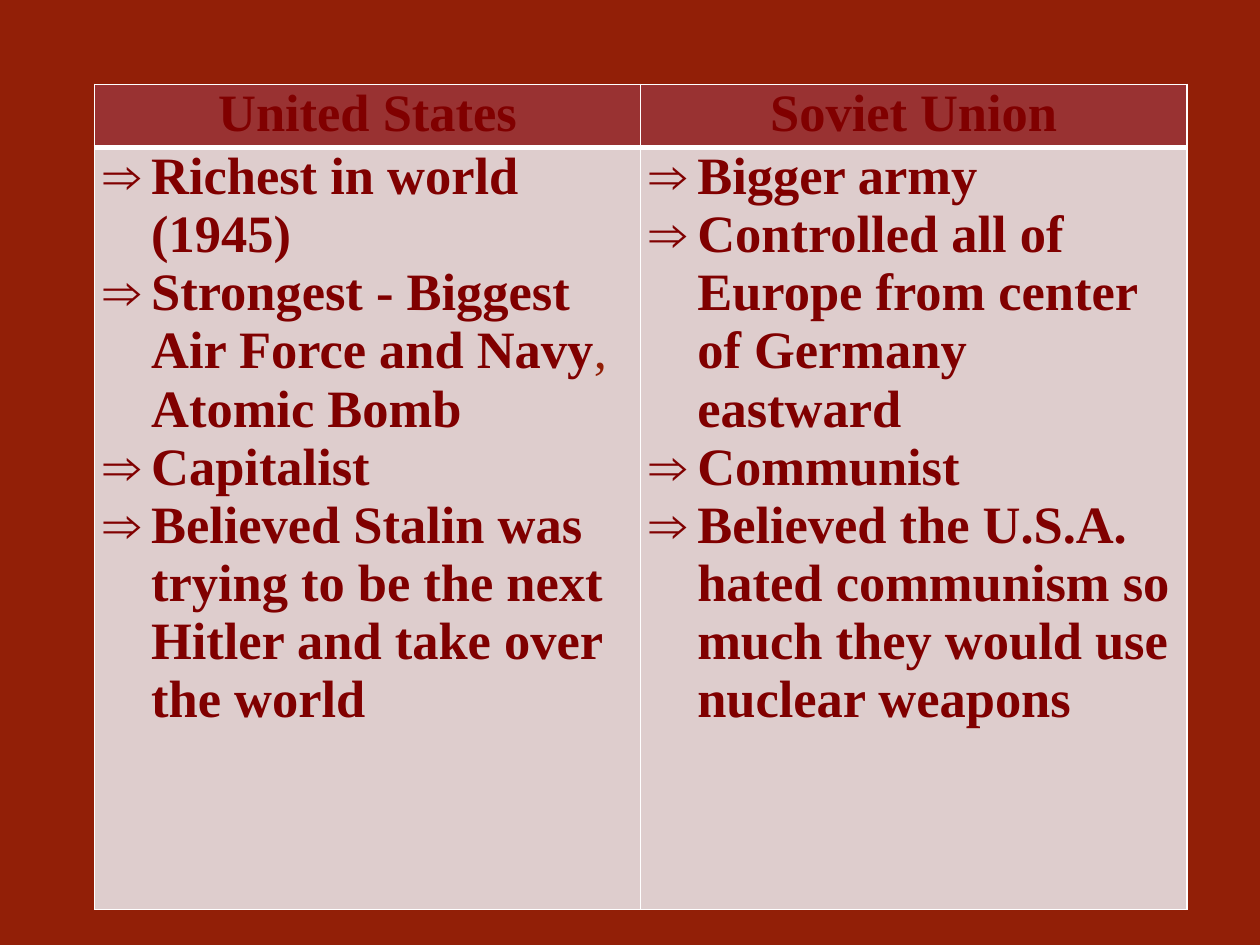
from lxml import etree
from pptx import Presentation
from pptx.dml.color import RGBColor
from pptx.enum.text import PP_ALIGN
from pptx.oxml.ns import qn
from pptx.util import Inches, Pt

CENTER = PP_ALIGN.CENTER
BACKGROUND, TEXT, LINE = "921F07", "800000", "FFFFFF"
HEADER_FILL, BODY_FILL = "993232", "DECDCD"
HANGING = Inches(0.38)
COLUMN_WIDTH = 4.335
ROW_HEIGHTS = [0.5, 6.05]

# Each point is a list of text pieces; a lone comma is set in a lighter style.
COUNTRIES = {
    "United States": [
        ["Richest in world (1945)"],
        ["Strongest - Biggest Air Force and Navy", ", ", "Atomic Bomb"],
        ["Capitalist"],
        ["Believed Stalin was trying to be the next Hitler and take over the world"],
    ],
    "Soviet Union": [
        ["Bigger army"],
        ["Controlled all of Europe from center of Germany eastward"],
        ["Communist"],
        ["Believed the U.S.A. hated communism so much they would use nuclear weapons"],
    ],
}


def color(hex_string):
    return RGBColor.from_string(hex_string)


def add_child(parent, tag, **attributes):
    child = etree.SubElement(parent, qn(tag))
    for key, value in attributes.items():
        child.set(key, str(value))
    return child


prs = Presentation()
prs.slide_width, prs.slide_height = Inches(10), Inches(7.5)
slide = prs.slides.add_slide(prs.slide_layouts[6])
slide.background.fill.solid()
slide.background.fill.fore_color.rgb = color(BACKGROUND)

table = slide.shapes.add_table(
    len(ROW_HEIGHTS), len(COUNTRIES), Inches(0.75), Inches(0.67),
    Inches(COLUMN_WIDTH * len(COUNTRIES)), Inches(sum(ROW_HEIGHTS))).table
for row, height in zip(table.rows, ROW_HEIGHTS):
    row.height = Inches(height)

for column, (country, points) in enumerate(COUNTRIES.items()):
    table.columns[column].width = Inches(COLUMN_WIDTH)
    for row, contents in enumerate([[[country]], points]):
        is_header = row == 0
        cell = table.cell(row, column)
        cell.margin_left = cell.margin_right = Inches(0.07)
        cell.margin_top = cell.margin_bottom = 0

        # Borders must come before the fill; the rule under the header is thick.
        thick_side = "a:lnB" if is_header else "a:lnT"
        cell_properties = cell._tc.get_or_add_tcPr()
        for side in ("a:lnL", "a:lnR", "a:lnT", "a:lnB"):
            width = Pt(3) if side == thick_side else Pt(1)
            border = add_child(cell_properties, side, w=width)
            add_child(add_child(border, "a:solidFill"), "a:srgbClr", val=LINE)
        cell.fill.solid()
        cell.fill.fore_color.rgb = color(HEADER_FILL if is_header else BODY_FILL)

        frame = cell.text_frame
        for number, pieces in enumerate(contents):
            paragraph = frame.add_paragraph() if number else frame.paragraphs[0]
            if is_header:
                paragraph.alignment = CENTER
            else:
                properties = paragraph._p.get_or_add_pPr()
                properties.set("marL", str(HANGING))
                properties.set("indent", str(-HANGING))
                add_child(properties, "a:buFont", typeface="Times New Roman")
                add_child(properties, "a:buChar", char="⇒")
                tabs = add_child(properties, "a:tabLst")
                add_child(tabs, "a:tab", pos=Inches(0.25), algn="l")
            font = paragraph.font
            font.name, font.size, font.bold = "Times New Roman", Pt(30), True
            font.color.rgb = color(TEXT)
            for piece in pieces:
                run = paragraph.add_run()
                run.text = piece
                if piece == ", ":
                    run.font.bold = False
                    run.font.color.rgb = color(BACKGROUND)

prs.save("out.pptx")
